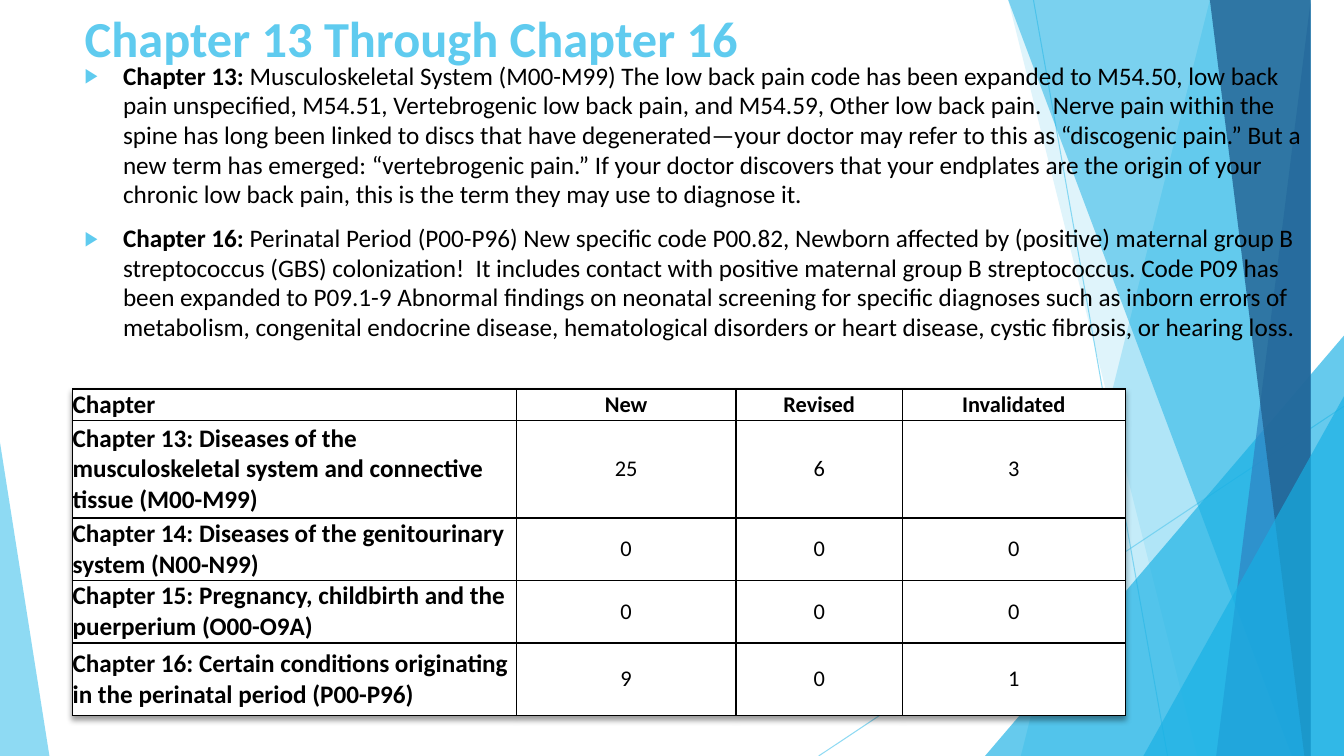
from lxml import etree
from pptx import Presentation
from pptx.dml.color import RGBColor
from pptx.enum.shapes import MSO_CONNECTOR, MSO_SHAPE
from pptx.enum.text import MSO_ANCHOR, MSO_AUTO_SIZE, PP_ALIGN
from pptx.oxml.ns import qn
from pptx.util import Inches, Pt

STRAIGHT, TRIANGLE = MSO_CONNECTOR.STRAIGHT, MSO_SHAPE.ISOSCELES_TRIANGLE
TOP, MIDDLE = MSO_ANCHOR.TOP, MSO_ANCHOR.MIDDLE
LEFT, CENTER = PP_ALIGN.LEFT, PP_ALIGN.CENTER
NO_FIT = MSO_AUTO_SIZE.NONE

# Content
FONT = "Calibri"
SKY, CYAN, BLUE, NAVY = "5FCBEF", "17B0E4", "2E83C3", "226292"
BLACK, WHITE = "000000", "FFFFFF"
WIDTH, HEIGHT = 13.33, 7.5

HEADING = "Chapter 13 Through Chapter 16"
CHAPTER_NOTES = [
    ("Chapter 13: ",
     "Musculoskeletal System (M00-M99) The low back pain code has been expanded to M54.50, "
     "low back pain unspecified, M54.51, Vertebrogenic low back pain, and M54.59, Other low "
     "back pain.  Nerve pain within the spine has long been linked to discs that have "
     "degenerated—your doctor may refer to this as “discogenic pain.” But a new term has "
     "emerged: “vertebrogenic pain.” If your doctor discovers that your endplates are the "
     "origin of your chronic low back pain, this is the term they may use to diagnose it."),
    ("Chapter 16: ",
     "Perinatal Period (P00-P96) New specific code P00.82, Newborn affected by (positive) "
     "maternal group B streptococcus (GBS) colonization!  It includes contact with positive "
     "maternal group B streptococcus. Code P09 has been expanded to P09.1-9 Abnormal findings "
     "on neonatal screening for specific diagnoses such as inborn errors of metabolism, "
     "congenital endocrine disease, hematological disorders or heart disease, cystic "
     "fibrosis, or hearing loss.   "),
]
CODE_CHANGES = [
    ("Chapter", "New", "Revised", "Invalidated"),
    ("Chapter 13: Diseases of the musculoskeletal system and connective tissue (M00-M99)",
     "25", "6", "3"),
    ("Chapter 14: Diseases of the genitourinary system (N00-N99)", "0", "0", "0"),
    ("Chapter 15: Pregnancy, childbirth and the puerperium (O00-O9A)", "0", "0", "0"),
    ("Chapter 16: Certain conditions originating in the perinatal period (P00-P96)",
     "9", "0", "1"),
]
COLUMN_WIDTHS = [4.4, 2.18, 1.65, 2.21]
ROW_HEIGHTS = [0.31, 0.97, 0.62, 0.62, 0.72]

# Backdrop: thin rays, then bands (left edge at top and bottom) and wedges (left, width, height)
RAYS = [((10.25, 0), (11.58, HEIGHT)), ((WIDTH, 4.03), (8.12, HEIGHT))]
FACETS = [
    ("band", (12.28, 10.04), SKY, 36),
    ("band", (10.5, 11.83), SKY, 20),
    ("wedge", (9.77, 3.56, 4.17), CYAN, 66),
    ("band", (10.21, 12.91), CYAN, 50),
    ("band", (13.03, 11.92), BLUE, 70),
    ("band", (11.96, 13.18), NAVY, 80),
    ("wedge", (11.34, 1.99, 3.57), CYAN, 66),
    ("wedge", (0, 0.49, 3.11), SKY, 70),
]


def rgb(color):
    return RGBColor.from_string(color)


def add_xml(parent, tag, **attributes):
    return etree.SubElement(parent, qn(tag), attributes)


def set_color(fill, color, opacity=100):
    fill.solid()
    fill.fore_color.rgb = rgb(color)
    if opacity < 100:
        solid = fill._xPr.find(qn("a:solidFill"))
        add_xml(solid[0], "a:alpha", val=str(opacity * 1000))


def style_run(run, size, color, bold):
    run.font.name, run.font.size, run.font.bold = FONT, Pt(size), bold
    run.font.color.rgb = rgb(color)


def place(shape, left, top, width, height):
    shape.left, shape.top = Inches(left), Inches(top)
    shape.width, shape.height = Inches(width), Inches(height)


def add_border(cell):
    properties = cell._tc.get_or_add_tcPr()
    for side in ("a:lnL", "a:lnR", "a:lnT", "a:lnB"):
        edge = add_xml(properties, side, w=str(Pt(1)))
        add_xml(add_xml(edge, "a:solidFill"), "a:srgbClr", val=BLACK)


prs = Presentation()
prs.slide_width, prs.slide_height = Inches(WIDTH), Inches(HEIGHT)
slide = prs.slides.add_slide(prs.slide_layouts[1])
shapes = slide.shapes
title, body = slide.placeholders

# Backdrop
for start, end in RAYS:
    ray = shapes.add_connector(STRAIGHT, *(Inches(v) for v in start + end))
    ray.line.width = Pt(0.75)
    set_color(ray.line.fill, SKY, 70)
    add_xml(ray._element.spPr, "a:effectLst")

for kind, geometry, color, opacity in FACETS:
    if kind == "band":
        top_x, bottom_x = geometry
        outline = shapes.build_freeform(top_x, -0.01, scale=Inches(1))
        outline.add_line_segments([(WIDTH, -0.01), (WIDTH, HEIGHT), (bottom_x, HEIGHT)])
        facet = outline.convert_to_shape()
    else:
        left, width, height = geometry
        facet = shapes.add_shape(TRIANGLE, 0, 0, 0, 0)
        place(facet, left, HEIGHT - height, width, height)
        facet.adjustments[0] = 1 if left else 0
    facet.shadow.inherit = False
    facet.line.fill.background()
    set_color(facet.fill, color, opacity)

# Placeholders go in front of the backdrop
for holder in (title, body):
    shapes._spTree.append(holder._element)
    holder.text_frame.auto_size = NO_FIT

# Title
place(title, 0.74, 0, 9.4, 0.74)
title.text_frame.text = HEADING
title.text_frame.vertical_anchor = MIDDLE
heading = title.text_frame.paragraphs[0]
heading.alignment = LEFT
style_run(heading.runs[0], 36, SKY, True)

# Chapter notes
place(body, 0.74, 0.56, 12.3, 6.83)
notes = body.text_frame
notes.vertical_anchor = TOP
notes.text = "\n".join(label for label, _ in CHAPTER_NOTES)
for note, (_, detail) in zip(notes.paragraphs, CHAPTER_NOTES):
    note.add_run().text = detail
    for run, bold in zip(note.runs, (True, False)):
        style_run(run, 18, BLACK, bold)
    note.space_before, note.line_spacing = Pt(10), 0.98
    bullet = note._p.get_or_add_pPr()
    bullet.set("marL", str(Inches(0.38)))
    bullet.set("indent", str(Inches(-0.38)))
    add_xml(add_xml(bullet, "a:buClr"), "a:srgbClr", val=SKY)
    add_xml(bullet, "a:buSzPct", val="80000")
    add_xml(bullet, "a:buChar", char="▶")

# Code changes table
frame = shapes.add_table(len(ROW_HEIGHTS), len(COLUMN_WIDTHS), Inches(0.72), Inches(3.86),
                         Inches(sum(COLUMN_WIDTHS)), Inches(sum(ROW_HEIGHTS)))
table = frame.table
for column, width in zip(table.columns, COLUMN_WIDTHS):
    column.width = Inches(width)
for row, height in zip(table.rows, ROW_HEIGHTS):
    row.height = Inches(height)

for r, entries in enumerate(CODE_CHANGES):
    for c, entry in enumerate(entries):
        cell = table.cell(r, c)
        cell.text = entry
        cell.vertical_anchor = MIDDLE
        cell.margin_left = cell.margin_right = cell.margin_top = cell.margin_bottom = 0
        add_border(cell)
        set_color(cell.fill, WHITE)
        paragraph = cell.text_frame.paragraphs[0]
        paragraph.alignment = CENTER if c else LEFT
        style_run(paragraph.runs[0], 16 if c else 18, BLACK, r == 0 or c == 0)

# Soft shadow below the table
effects = etree.Element(qn("a:effectLst"))
shadow = add_xml(effects, "a:outerShdw", blurRad=str(Pt(4)), dist=str(Pt(2)),
                 dir="5400000", algn="t", rotWithShape="0")
add_xml(add_xml(shadow, "a:srgbClr", val=BLACK), "a:alpha", val="40000")
table._tbl.tblPr.insert(0, effects)

prs.save("out.pptx")
